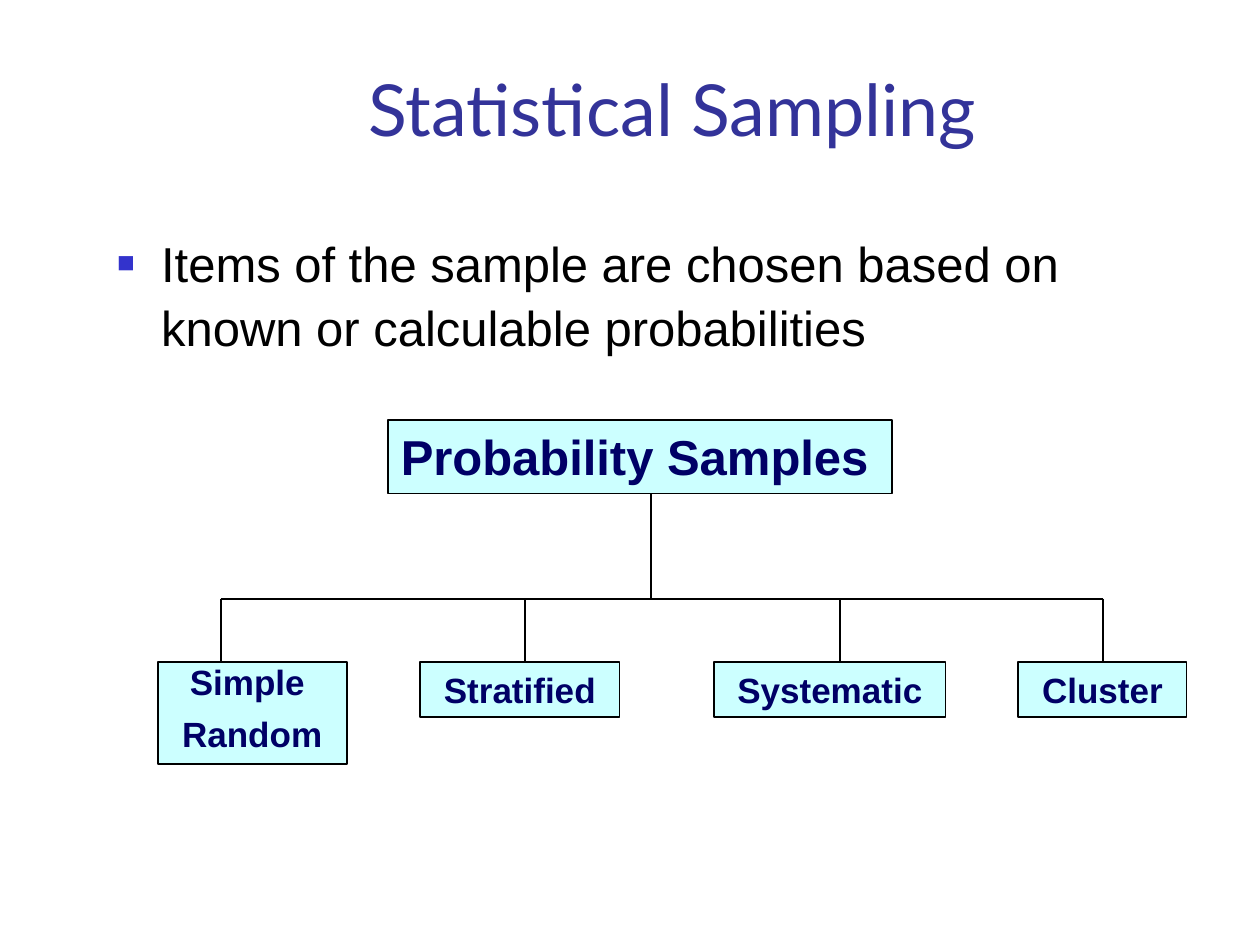
"""Build a slide that shows the kinds of probability samples as a tree."""
from lxml import etree
from pptx import Presentation
from pptx.dml.color import RGBColor
from pptx.enum import shapes, text
from pptx.oxml import ns
from pptx.util import Cm, Pt


def tint(color, code):
    color.rgb = RGBColor.from_string(code)


def write(frame, words, size, font, code, bold=False, align=text.PP_ALIGN.CENTER):
    frame.word_wrap = True
    frame.margin_top = frame.margin_bottom = Cm(0.13)
    frame.text = words
    for para in frame.paragraphs:
        para.alignment = align
        for run in para.runs:
            run.font.size, run.font.name, run.font.bold = Pt(size), font, bold
            tint(run.font.color, code)


deck = Presentation()
deck.slide_width, deck.slide_height = Cm(25.4), Cm(19.05)
slide = deck.slides.add_slide(deck.slide_layouts[6])
left = text.PP_ALIGN.LEFT

title = slide.shapes.add_textbox(Cm(2.74), Cm(1.07), Cm(21.64), Cm(2.11)).text_frame
write(title, "Statistical Sampling", 41, "Lato", "333399")
title.vertical_anchor = text.MSO_ANCHOR.BOTTOM

body = slide.shapes.add_textbox(Cm(2.11), Cm(4.45), Cm(22.43), Cm(11.43)).text_frame
write(body, "Items of the sample are chosen based on known or calculable probabilities",
      28, "Arial", "000000", align=left)
point = body.paragraphs[0]
point.line_spacing = 1.1
props = point._p.get_or_add_pPr()
props.set("marL", str(Cm(0.89)))
props.set("indent", str(-Cm(0.89)))
hue = etree.SubElement(props, ns.qn("a:buClr"))
etree.SubElement(hue, ns.qn("a:srgbClr"), val="3333CC")
etree.SubElement(props, ns.qn("a:buSzPct"), val="60000")
etree.SubElement(props, ns.qn("a:buFont"), typeface="Arial")
etree.SubElement(props, ns.qn("a:buChar"), char="■")

bar, row = 12.07, 13.34
stems = [4.45, 10.58, 16.93, 22.23]
lines = [(13.12, 9.95, 13.12, bar), (stems[0], bar, stems[-1], bar)]
lines += [(x, bar, x, row) for x in stems]
for ends in lines:
    line = slide.shapes.add_connector(shapes.MSO_CONNECTOR.STRAIGHT, *map(Cm, ends))
    line.line.width = Pt(1)
    tint(line.line.color, "000000")
    etree.SubElement(line._element.spPr, ns.qn("a:effectLst"))

center = text.PP_ALIGN.CENTER
boxes = [
    ("Probability Samples", 7.83, 8.47, 10.16, 1.48, 28, left),
    ("Simple \nRandom", 3.18, row, 3.81, 2.07, 20, center),
    ("Stratified", 8.47, row, 4.02, 1.12, 20, center),
    ("Systematic", 14.4, row, 4.66, 1.12, 20, center),
    ("Cluster", 20.53, row, 3.39, 1.12, 20, center),
]
for words, x, y, wide, high, size, align in boxes:
    box = slide.shapes.add_shape(shapes.MSO_SHAPE.RECTANGLE, Cm(x), Cm(y), Cm(wide), Cm(high))
    box.shadow.inherit = False
    box.fill.solid()
    tint(box.fill.fore_color, "CCFFFF")
    box.line.width = Pt(1)
    tint(box.line.color, "000000")
    frame = box.text_frame
    write(frame, words, size, "Arial", "000066", True, align)
    frame.vertical_anchor = text.MSO_ANCHOR.TOP
    if len(frame.paragraphs) > 1:
        for para in frame.paragraphs:
            para.line_spacing = 0.8
        para.space_before = Pt(11)

deck.save("out.pptx")
